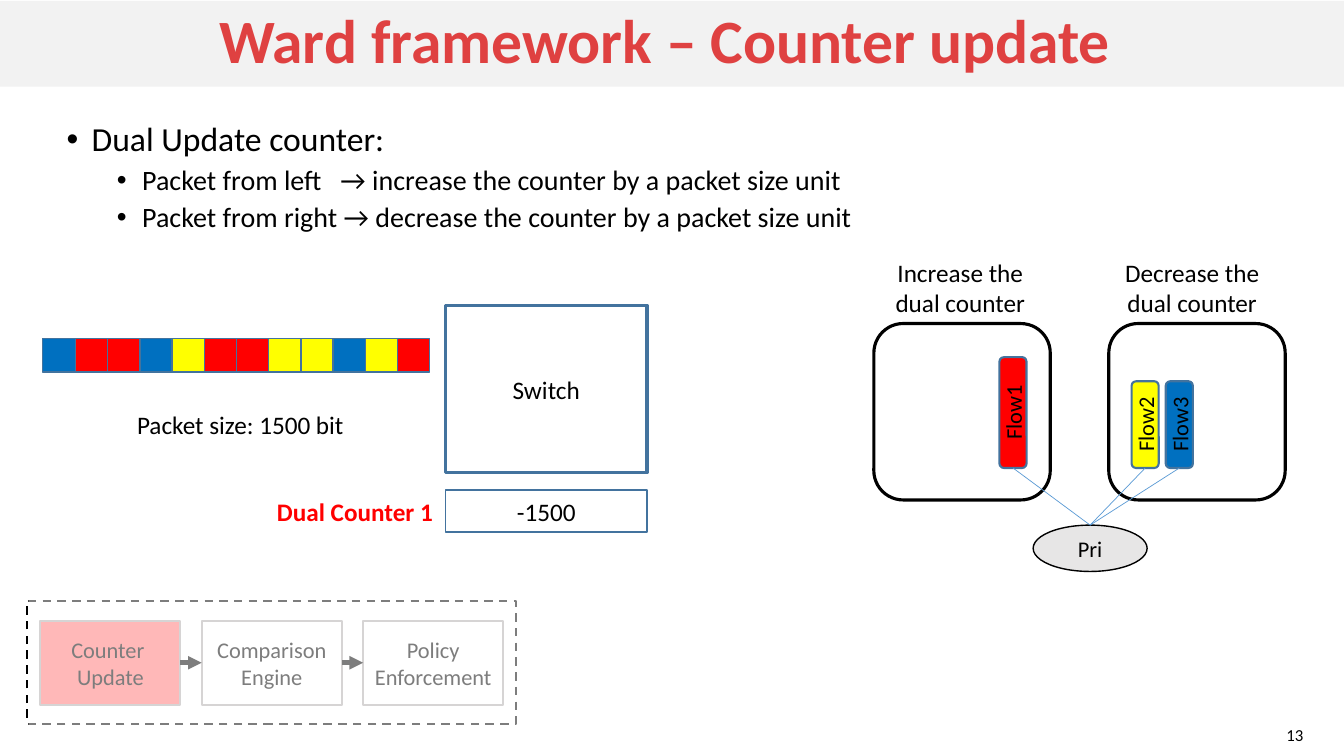
from lxml import etree
from pptx import Presentation
from pptx.dml.color import RGBColor
from pptx.enum.dml import MSO_LINE
from pptx.enum.shapes import MSO_CONNECTOR, MSO_SHAPE
from pptx.enum.text import MSO_ANCHOR, MSO_AUTO_SIZE, PP_ALIGN
from pptx.oxml.ns import qn
from pptx.util import Pt

RECT, ROUND, OVAL = MSO_SHAPE.RECTANGLE, MSO_SHAPE.ROUNDED_RECTANGLE, MSO_SHAPE.OVAL
LEFT, CENTER, RIGHT = PP_ALIGN.LEFT, PP_ALIGN.CENTER, PP_ALIGN.RIGHT
TOP, MIDDLE = MSO_ANCHOR.TOP, MSO_ANCHOR.MIDDLE
FONT = "Calibri"
RED, YELLOW, BLUE = "FF0000", "FFFF00", "0070C0"
EDGE, BLACK, WHITE = "43739E", "000000", "FFFFFF"

TITLE = "Ward framework – Counter update "
# level, text, size, left margin, space before
BULLETS = [
    (0, "Dual Update counter:", 24, 18, 12),
    (1, "Packet from left   → increase the counter by a packet size unit", 20, 54, 5),
    (1, "Packet from right → decrease the counter by a packet size unit", 20, 54, 5),
]
PACKETS = [BLUE, RED, RED, BLUE, YELLOW, RED, RED, YELLOW, YELLOW, BLUE, YELLOW, RED]
# text, box, size, colour, bold, alignment
LABELS = [
    ("Dual Counter 1", (190.8, 350.6, 126.7, 29), 18, RED, True, LEFT),
    ("Packet size: 1500 bit", (90, 288.7, 163.4, 29), 18, BLACK, False, CENTER),
    ("Increase the \ndual counter ", (630, 180, 115.9, 51), 18, BLACK, False, CENTER),
    ("Decrease the \ndual counter ", (795.6, 180, 115.9, 51), 18, BLACK, False, CENTER),
    ("13", (861.1, 514.1, 77, 21.6), 12, BLACK, False, RIGHT),
]
COUNTER_FRAMES_X = [792, 624.2]
# name, fill, centre x, length
FLOWS = [("Flow1", RED, 723.6, 79.2), ("Flow2", YELLOW, 818, 62), ("Flow3", BLUE, 842.4, 62)]
FLOW_BOTTOM, FLOW_THICKNESS = 334.3, 19.4
STEPS = [("Counter \nUpdate", "FF7575"), ("Comparison\nEngine", None), ("Policy Enforcement", None)]
STEP_X, STEP_PITCH = 28.8, 115.3

prs = Presentation()
prs.slide_width, prs.slide_height = Pt(960), Pt(540)
s = prs.slides.add_slide(prs.slide_layouts[1])


def rgb(value):
    return RGBColor.from_string(value)


def place(sp, box):
    sp.left, sp.top, sp.width, sp.height = (Pt(v) for v in box)


def style(tf, size, color=BLACK, bold=False, align=CENTER, anchor=MIDDLE):
    tf.vertical_anchor = anchor
    for p in tf.paragraphs:
        p.alignment = align
        for r in p.runs:
            r.font.name, r.font.size, r.font.bold = FONT, Pt(size), bold
            r.font.color.rgb = rgb(color)


def add_box(kind, box, fill=None, line=None, width=1, text="", size=18):
    sp = s.shapes.add_shape(kind, *(Pt(v) for v in box))
    sp.shadow.inherit = False
    if fill:
        sp.fill.solid()
        sp.fill.fore_color.rgb = rgb(fill)
    else:
        sp.fill.background()
    if line:
        sp.line.color.rgb = rgb(line)
        sp.line.width = Pt(width)
    else:
        sp.line.fill.background()
    if text:
        sp.text_frame.word_wrap = True
        sp.text_frame.text = text
        style(sp.text_frame, size)
    return sp


def add_link(start, start_side, end, end_side, color, width):
    """Add a straight connector glued to both shapes."""
    link = s.shapes.add_connector(MSO_CONNECTOR.STRAIGHT, 0, 0, 0, 0)
    link.begin_connect(start, start_side)
    link.end_connect(end, end_side)
    link.line.color.rgb = rgb(color)
    link.line.width = Pt(width)
    etree.SubElement(link._element.spPr, qn("a:effectLst"))
    return link


# Title and bullets
title, body = s.shapes.title, s.placeholders[1]
place(title, (0, 0.7, 960, 61.2))
title.fill.solid()
title.fill.fore_color.rgb = rgb("F2F2F2")
title.text_frame.text = TITLE
style(title.text_frame, 44, "DF4141", True)
title.text_frame.paragraphs[0].line_spacing = 0.9

place(body, (40.3, 84.2, 887.8, 379.4))
tf = body.text_frame
tf.text = "\n".join(text for _, text, *_ in BULLETS)
for p, (level, text, size, margin, before) in zip(tf.paragraphs, BULLETS):
    p.level, p.line_spacing, p.space_before = level, 0.9, Pt(before)
    pPr = p._p.get_or_add_pPr()
    pPr.set("marL", str(Pt(margin)))
    pPr.set("indent", str(Pt(-18)))
    etree.SubElement(pPr, qn("a:buFont"), typeface="Arial")
    etree.SubElement(pPr, qn("a:buChar"), char="•")
style(tf, 24, align=LEFT, anchor=TOP)
for p, (_, _, size, *_) in zip(tf.paragraphs, BULLETS):
    p.runs[0].font.size = Pt(size)
for frame in (title.text_frame, tf):
    frame.auto_size = MSO_AUTO_SIZE.NONE

# Packets, each one overlapped by its left neighbour
for i, color in reversed(list(enumerate(PACKETS))):
    add_box(RECT, (30.2 + 23 * i, 241.9, 23.8, 23.8), color, EDGE)

# Switch and its counter
add_box(RECT, (318.2, 218.2, 144, 119.5), None, EDGE, 2.25, "Switch")
add_box(RECT, (318.2, 349.9, 144, 30.2), WHITE, EDGE, 1, "-1500")

# Flows of the two counter directions
for x in COUNTER_FRAMES_X:
    add_box(ROUND, (x, 231.1, 126, 126), WHITE, BLACK, 2.25)
pri = add_box(OVAL, (738, 375.1, 81.4, 33.1), "E7E6E6", BLACK, 1, "Pri", 16)
for name, color, x, length in FLOWS:
    middle = FLOW_BOTTOM - length / 2
    flow = add_box(ROUND, (x - length / 2, middle - FLOW_THICKNESS / 2, length, FLOW_THICKNESS),
                   color, EDGE, 1.5, name, 16)
    flow.rotation = 270
    link = add_link(flow, 1, pri, 0, "5B9BD5", 0.5)
    # The turned shape has its left side at the bottom
    link.begin_x, link.begin_y = Pt(x), Pt(FLOW_BOTTOM)

# Labels
for text, box, size, color, bold, align in LABELS:
    tb = s.shapes.add_textbox(*(Pt(v) for v in box))
    tb.text_frame.word_wrap = False
    tb.text_frame.text = text
    style(tb.text_frame, size, color, bold, align)

# Pipeline of steps, dimmed by a translucent veil
steps = [add_box(RECT, (STEP_X + STEP_PITCH * i, 443.5, 100.1, 59.8), fill, "AFABAB", 1.5, text, 16)
         for i, (text, fill) in enumerate(STEPS)]
for before, after in zip(steps, steps[1:]):
    arrow = add_link(before, 3, after, 1, BLACK, 3.25)
    etree.SubElement(arrow.line._get_or_add_ln(), qn("a:tailEnd"), type="triangle")
pipeline = add_box(RECT, (19.4, 429.1, 349.2, 87.8), None, BLACK, 1.5)
pipeline.line.dash_style = MSO_LINE.DASH
veil = add_box(RECT, (20.2, 414.7, 372.2, 107.3), WHITE)
veil_color = veil._element.spPr.find(qn("a:solidFill")).find(qn("a:srgbClr"))
etree.SubElement(veil_color, qn("a:alpha"), val="49000")

prs.save("out.pptx")
